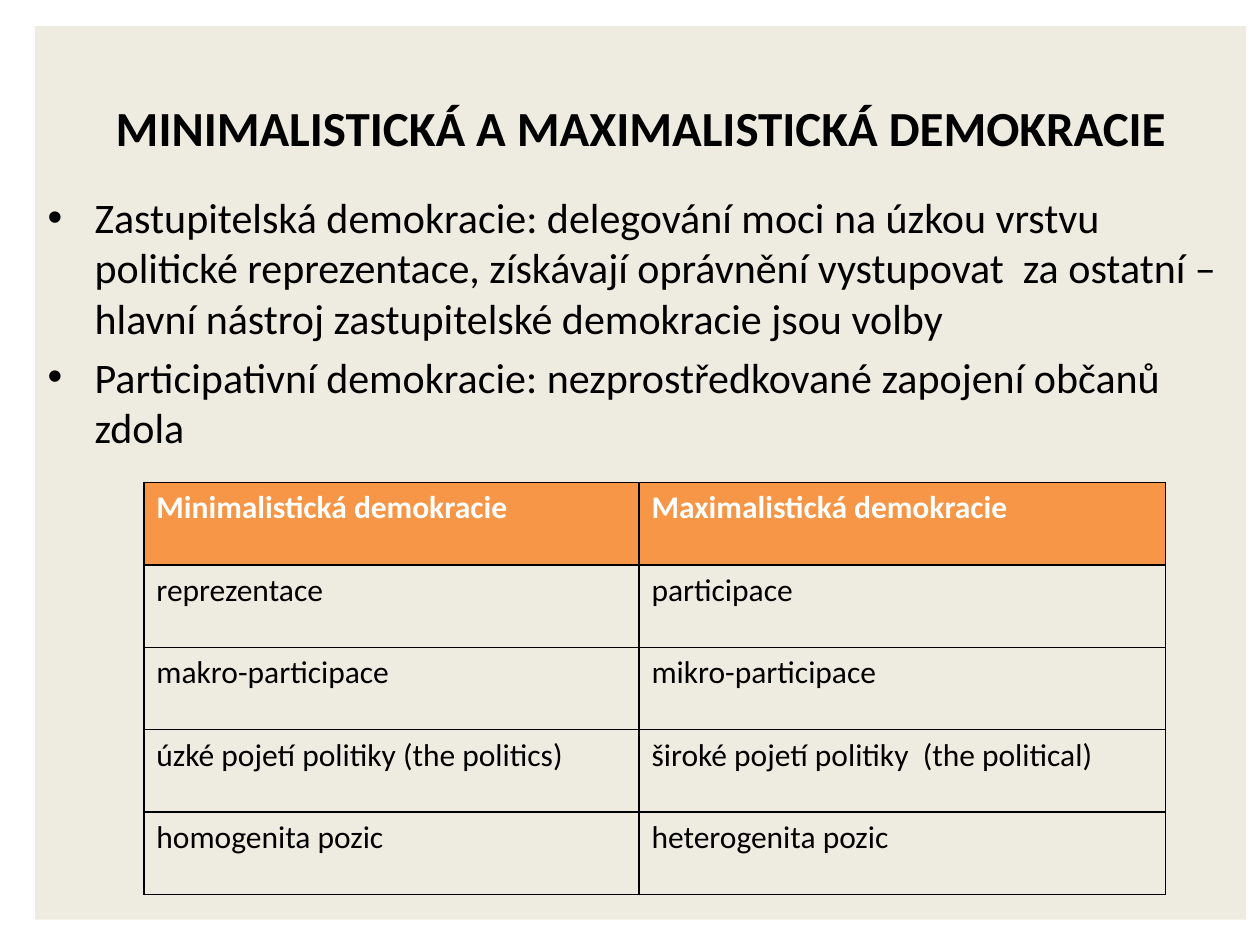
"""Build the slide comparing minimalist and maximalist democracy."""
from lxml.etree import SubElement
from pptx import Presentation
from pptx.dml.color import RGBColor
from pptx.enum.shapes import MSO_SHAPE
from pptx.enum.text import MSO_ANCHOR, PP_ALIGN
from pptx.oxml.ns import qn
from pptx.util import Cm, Pt


def paint(fill, color):
    fill.solid()
    fill.fore_color.rgb = RGBColor.from_string(color)


def write(paragraph, text, size, color="000000", bold=False):
    run = paragraph.add_run()
    run.text = text
    run.font.name = "Calibri"
    run.font.size = Pt(size)
    run.font.bold = bold
    paint(run.font.fill, color)


presentation = Presentation()
presentation.slide_width = Cm(25.4)
presentation.slide_height = Cm(19.05)
slide = presentation.slides.add_slide(presentation.slide_layouts[5])
paint(slide.background.fill, "FFFFFF")

panel = slide.shapes.add_shape(MSO_SHAPE.RECTANGLE, Cm(0.71), Cm(0.53), Cm(24.41), Cm(18.01))
slide.shapes._spTree.insert(2, panel._element)
panel.shadow.inherit = False
panel.line.fill.background()
paint(panel.fill, "EEECE1")

heading = slide.shapes.title
heading.left, heading.top, heading.width, heading.height = Cm(0.71), Cm(1.65), Cm(24.41), Cm(1.8)
heading.text_frame.vertical_anchor = MSO_ANCHOR.MIDDLE
heading.text_frame.paragraphs[0].alignment = PP_ALIGN.CENTER
write(heading.text_frame.paragraphs[0], "MINIMALISTICKÁ A MAXIMALISTICKÁ DEMOKRACIE", 28, bold=True)

concepts = [
    "Zastupitelská demokracie: delegování moci na úzkou vrstvu politické reprezentace, "
    "získávají oprávnění vystupovat  za ostatní – hlavní nástroj zastupitelské demokracie jsou volby",
    "Participativní demokracie: nezprostředkované zapojení občanů zdola",
]
body = panel.text_frame
body.word_wrap = True
body.vertical_anchor = MSO_ANCHOR.TOP
body.margin_top = Cm(3.33)
for index, concept in enumerate(concepts):
    paragraph = body.add_paragraph() if index else body.paragraphs[0]
    paragraph.alignment = PP_ALIGN.LEFT
    properties = paragraph._p.get_or_add_pPr()
    properties.set("marL", str(Cm(0.95)))
    properties.set("indent", str(-Cm(0.95)))
    SubElement(properties, qn("a:buFont"), typeface="Arial")
    SubElement(properties, qn("a:buChar"), char="•")
    if index:
        paragraph.space_before = Pt(4.8)
    write(paragraph, concept, 24)

contrasts = [
    ("Minimalistická demokracie", "Maximalistická demokracie"),
    ("reprezentace", "participace"),
    ("makro-participace", "mikro-participace"),
    ("úzké pojetí politiky (the politics)", "široké pojetí politiky  (the political)"),
    ("homogenita pozic", "heterogenita pozic"),
]
row_height = Cm(1.66)
comparison = slide.shapes.add_table(
    len(contrasts), 2, Cm(2.9), Cm(9.73), Cm(20.6), row_height * len(contrasts)
).table
comparison.horz_banding = False
for column, width in zip(comparison.columns, (9.98, 10.62)):
    column.width = Cm(width)
for row, contrast in enumerate(contrasts):
    comparison.rows[row].height = row_height
    for column, text in enumerate(contrast):
        cell = comparison.cell(row, column)
        cell_properties = cell._tc.get_or_add_tcPr()
        for side in ("lnL", "lnR", "lnT", "lnB"):
            border = SubElement(cell_properties, qn(f"a:{side}"), w=str(Pt(1)))
            SubElement(SubElement(border, qn("a:solidFill")), qn("a:srgbClr"), val="000000")
        if row == 0:
            paint(cell.fill, "F79646")
        else:
            cell.fill.background()
        write(cell.text_frame.paragraphs[0], text, 18, "000000" if row else "FFFFFF", row == 0)

presentation.save("out.pptx")
